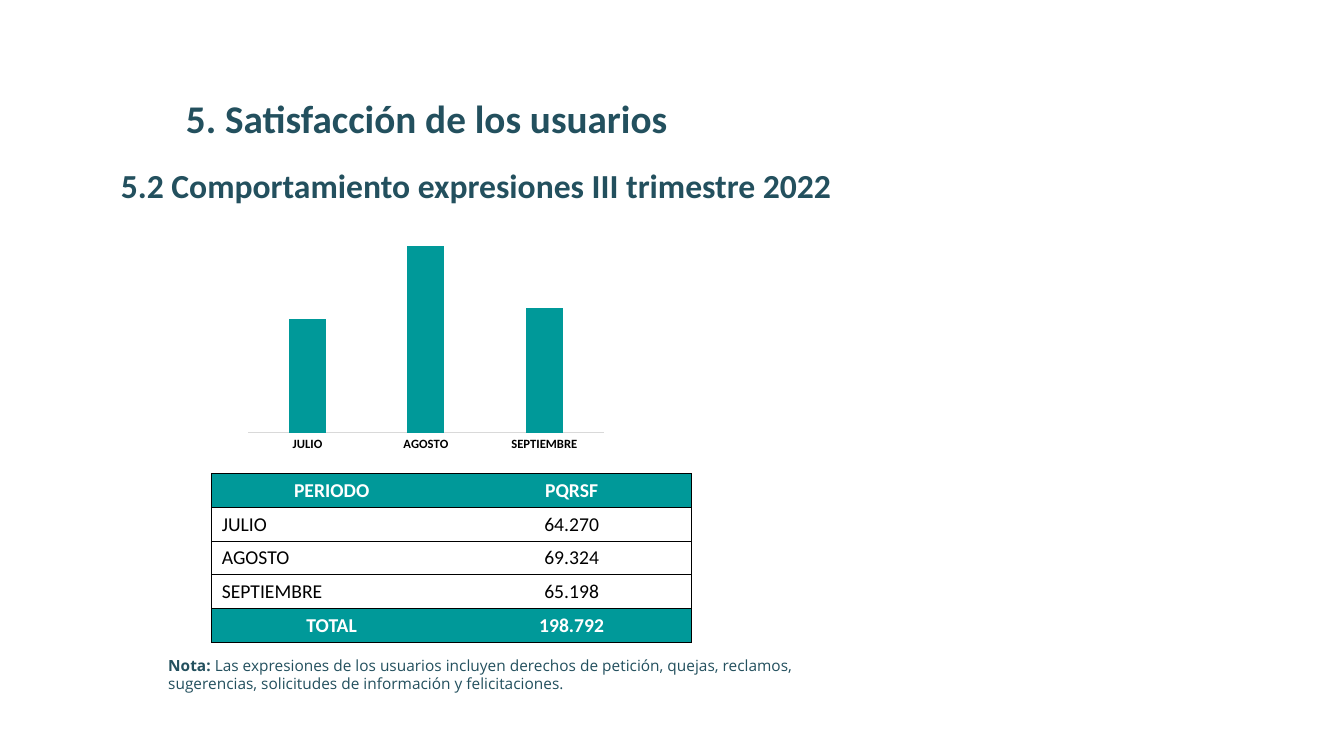
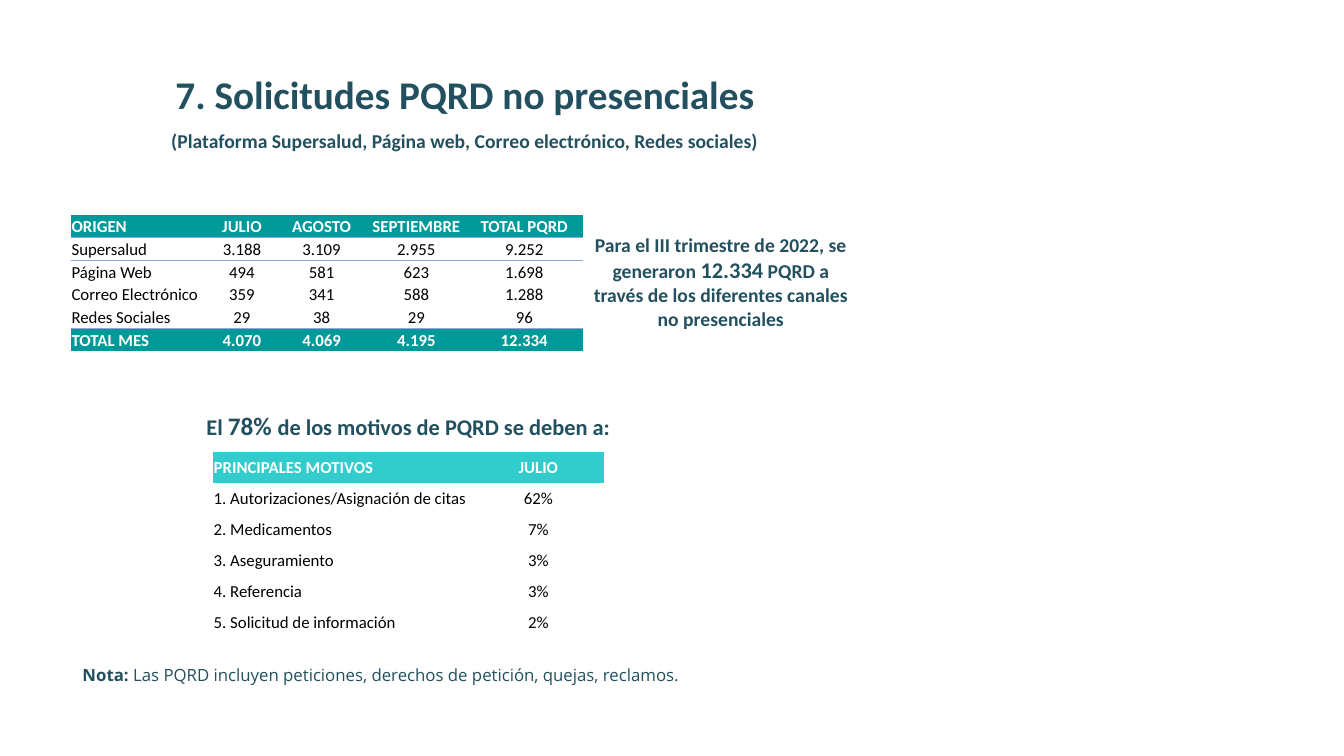
from lxml import etree
from pptx import Presentation
from pptx.chart.data import CategoryChartData
from pptx.dml.color import RGBColor
from pptx.enum.chart import XL_CHART_TYPE, XL_TICK_MARK
from pptx.enum.text import MSO_ANCHOR, PP_ALIGN
from pptx.oxml import parse_xml
from pptx.oxml.ns import nsdecls, qn
from pptx.util import Inches, Pt

# Shared look
NAVY = RGBColor(0x23, 0x50, 0x5E)
TEAL = RGBColor(0x00, 0x99, 0x99)
AQUA = RGBColor(0x33, 0xCC, 0xCC)
BLACK = RGBColor(0, 0, 0)
WHITE = RGBColor(0xFF, 0xFF, 0xFF)
GREY = RGBColor(0xD9, 0xD9, 0xD9)
BLUE = RGBColor(0x8E, 0xA9, 0xDB)
BODY, NOTE = "Calibri", "Open Sans"
LEFT, MID = PP_ALIGN.LEFT, PP_ALIGN.CENTER
PLAIN_TABLE = "{2D5ABB26-0587-4C30-8999-92F81FD0307C}"
TIGHT = (0.01, 0.01, 0.01, 0)
LOOSE = (0.1, 0.05, 0.1, 0.05)

# Text boxes: place, alignment, font, runs of (text, size, bold)
TEXTS = [
    [
        ((0.22, 0.89, 8.02, 0.57), MID, BODY,
         [("5. Satisfacción de los usuarios", 28, True)]),
        ((1.1, 1.59, 7.62, 0.5), LEFT, BODY,
         [("5.2 Comportamiento expresiones III trimestre 2022", 24, True)]),
        ((1.57, 6.46, 6.67, 0.47), LEFT, NOTE,
         [("Nota: ", 11, True),
          ("Las expresiones de los usuarios incluyen derechos de petición, quejas, "
           "reclamos, sugerencias, solicitudes de información y felicitaciones.", 11, False)]),
    ],
    [
        ((0, 0.65, 9.22, 0.57), MID, BODY,
         [("7. Solicitudes PQRD no presenciales", 28, True)]),
        ((0.94, 1.23, 7.34, 0.34), MID, BODY,
         [("(Plataforma Supersalud, Página web, Correo electrónico, Redes sociales)", 14, True)]),
        ((5.78, 2.26, 2.74, 1.08), MID, BODY,
         [("Para el III trimestre de 2022, se generaron ", 14, True), ("12.334", 16, True),
          (" PQRD a través de los diferentes canales no presenciales", 14, True)]),
        ((1.73, 4.02, 4.64, 0.4), MID, BODY,
         [("El ", 16, True), ("78% ", 18, True),
          ("de los motivos de PQRD se deben a:", 16, True)]),
        ((0.72, 6.55, 6.67, 0.3), LEFT, NOTE,
         [("Nota: ", 12, True),
          ("Las PQRD incluyen peticiones, derechos de petición, quejas, reclamos.", 12, False)]),
    ],
]

# Tables
PERIODS = [
    ("PERIODO", "PQRSF"),
    ("JULIO", "64.270"),
    ("AGOSTO", "69.324"),
    ("SEPTIEMBRE", "65.198"),
    ("TOTAL", "198.792"),
]
ORIGINS = [
    ("ORIGEN", "JULIO", "AGOSTO", "SEPTIEMBRE", "TOTAL PQRD"),
    ("Supersalud", "3.188", "3.109", "2.955", "9.252"),
    ("Página Web", "494", "581", "623", "1.698"),
    ("Correo Electrónico", "359", "341", "588", "1.288"),
    ("Redes Sociales", "29", "38", "29", "96"),
    ("TOTAL MES", "4.070", "4.069", "4.195", "12.334"),
]
MOTIVES = [
    ("PRINCIPALES MOTIVOS", "JULIO"),
    ("1. Autorizaciones/Asignación de citas", "62%"),
    ("2. Medicamentos", "7%"),
    ("3. Aseguramiento", "3%"),
    ("4. Referencia", "3%"),
    ("5. Solicitud de información", "2%"),
]

# Chart
BARS = {"JULIO": 93, "AGOSTO": 100, "SEPTIEMBRE": 94}
PLOT = {"x": 0.04, "y": 0.05, "w": 0.92, "h": 0.85}


def style(font, **looks):
    color = looks.pop("color")
    for key, value in looks.items():
        setattr(font, key, value)
    font.color.rgb = color


def add_text(slide, place, align, face, runs):
    frame = slide.shapes.add_textbox(*map(Inches, place)).text_frame
    frame.word_wrap = True
    para = frame.paragraphs[0]
    para.alignment = align
    for text, size, bold in runs:
        run = para.add_run()
        run.text = text
        style(run.font, name=face, size=Pt(size), bold=bold, color=NAVY)


def add_edges(cell, sides, color, width):
    props = cell._tc.get_or_add_tcPr()
    for side in sides:
        line = etree.SubElement(props, qn(f"a:ln{side}"), w=str(Pt(width)))
        fill = etree.SubElement(line, qn("a:solidFill"))
        etree.SubElement(fill, qn("a:srgbClr"), val=str(color))


def add_grid(slide, place, rows, cols, size, band, edges, pads=TIGHT,
             anchor=MSO_ANCHOR.MIDDLE, total=True, center=False):
    """Draw a table; edges(row, col) gives the sides, colour and width of its lines."""
    frame = slide.shapes.add_table(len(rows), len(cols), *map(Inches, place))
    frame._element.xpath(".//a:tableStyleId")[0].text = PLAIN_TABLE
    table = frame.table
    table.first_row = table.horz_banding = False
    for col, width in zip(table.columns, cols):
        col.width = Inches(width)
    for r, row in enumerate(rows):
        table.rows[r].height = Inches(place[3] / len(rows))
        strong = r == 0 or (total and r == len(rows) - 1)
        for c, text in enumerate(row):
            cell = table.cell(r, c)
            add_edges(cell, *edges(r, c))
            for side, pad in zip(("left", "top", "right", "bottom"), pads):
                setattr(cell, f"margin_{side}", Inches(pad))
            cell.vertical_anchor = anchor
            if strong:
                cell.fill.solid()
                cell.fill.fore_color.rgb = band
            else:
                cell.fill.background()
            para = cell.text_frame.paragraphs[0]
            para.alignment = MID if c or (strong and center) else LEFT
            run = para.add_run()
            run.text = text
            style(run.font, name=BODY, size=Pt(size), bold=strong,
                  color=WHITE if strong else BLACK)


def add_bars(slide, place):
    data = CategoryChartData(number_format="#,##0")
    data.categories = list(BARS)
    data.add_series("PQRSF", list(BARS.values()))
    chart = slide.shapes.add_chart(
        XL_CHART_TYPE.COLUMN_CLUSTERED, *map(Inches, place), data).chart
    chart.has_title = chart.has_legend = False
    style(chart.font, name=BODY, size=Pt(10), bold=True, color=BLACK)
    plot = chart.plots[0]
    plot.gap_width, plot.overlap, plot.vary_by_categories = 219, -27, False
    fill = plot.series[0].format.fill
    fill.solid()
    fill.fore_color.rgb = TEAL
    # Axes
    values, months = chart.value_axis, chart.category_axis
    values.minimum_scale, values.maximum_scale = 82, 108
    values.has_major_gridlines = values.visible = False
    months.major_tick_mark = XL_TICK_MARK.NONE
    style(months.tick_labels.font, name=BODY, size=Pt(9), bold=True, color=BLACK)
    months.format.line.color.rgb = GREY
    months.format.line.width = Pt(0.75)
    # Inner plot area
    area = chart._chartSpace.xpath(".//c:plotArea")[0]
    for old in area.findall(qn("c:layout")):
        area.remove(old)
    modes = "".join(f'<c:{k}Mode val="edge"/>' for k in "xy")
    sizes = "".join(f'<c:{k} val="{v}"/>' for k, v in PLOT.items())
    area.insert(0, parse_xml(
        f'<c:layout {nsdecls("c")}><c:manualLayout><c:layoutTarget val="inner"/>'
        f"{modes}{sizes}</c:manualLayout></c:layout>"))


def box_edges(r, c):
    return ("R" if c else "L") + "TB", BLACK, 0.75


def rule_edges(r, c):
    return "T" if r in (1, len(ORIGINS) - 1) else "", BLUE, 0.5


def no_edges(r, c):
    return "", BLACK, 0


def main():
    deck = Presentation()
    deck.slide_width, deck.slide_height = Inches(13.33), Inches(7.5)
    slides = []
    for texts in TEXTS:
        slide = deck.slides.add_slide(deck.slide_layouts[6])
        slides.append(slide)
        for text in texts:
            add_text(slide, *text)
    users, remote = slides
    # User satisfaction
    add_bars(users, (2.31, 1.46, 3.83, 3.15))
    add_grid(users, (2.1, 4.7, 4.75, 1.67), PERIODS, (2.38, 2.38), 14, TEAL, box_edges,
             pads=LOOSE, anchor=MSO_ANCHOR.TOP, center=True)
    # Remote requests
    add_grid(remote, (0.7, 2.13, 5.08, 1.35), ORIGINS, (1.36, 0.68, 0.9, 0.98, 1.16), 12,
             TEAL, rule_edges, anchor=MSO_ANCHOR.BOTTOM)
    add_grid(remote, (2.11, 4.48, 3.88, 1.85), MOTIVES, (2.58, 1.3), 12, AQUA, no_edges,
             total=False)
    deck.save("out.pptx")


if __name__ == "__main__":
    main()
